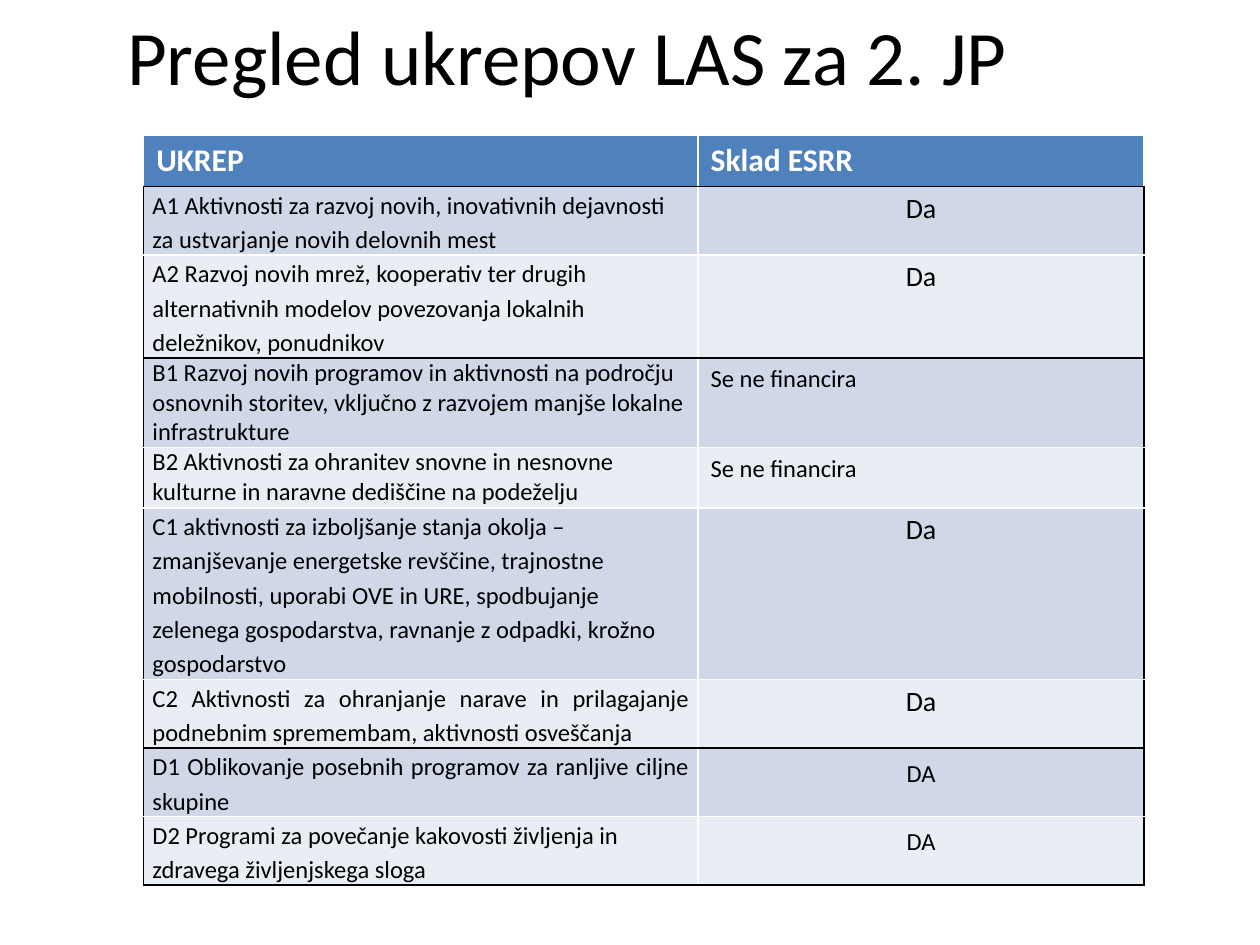
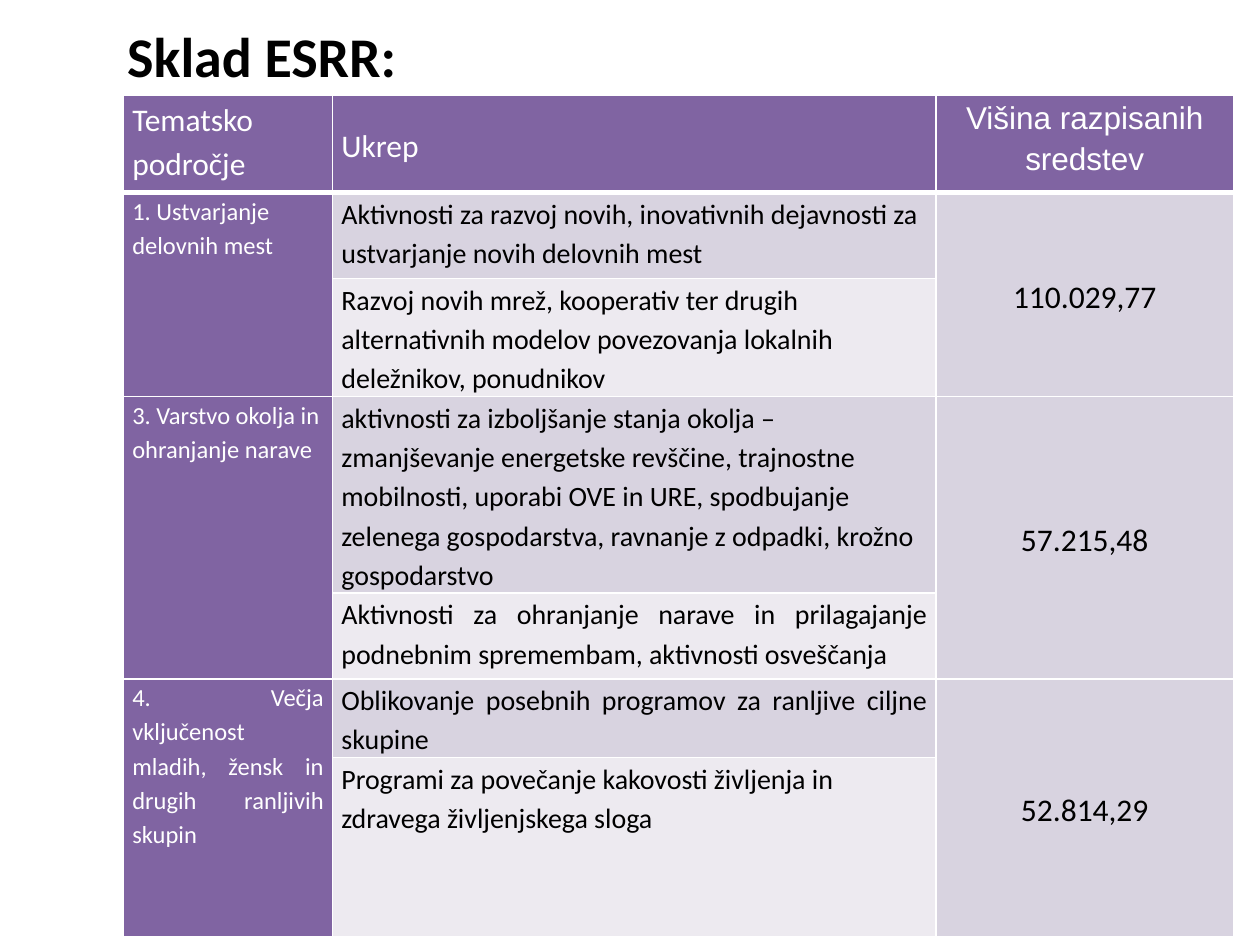
from lxml import etree
from pptx import Presentation
from pptx.dml.color import RGBColor
from pptx.enum.text import MSO_ANCHOR, MSO_AUTO_SIZE, PP_ALIGN
from pptx.oxml.ns import qn
from pptx.util import Inches, Pt

LEFT, MID, JUST = PP_ALIGN.LEFT, PP_ALIGN.CENTER, PP_ALIGN.JUSTIFY
TOP, CENTRE = MSO_ANCHOR.TOP, MSO_ANCHOR.MIDDLE
HEX = {"black": "000000", "white": "FFFFFF",
       "blue": "4F81BD", "sky": "D0D8E8", "mist": "E9EDF4",
       "plum": "8064A2", "lilac": "D8D3E0", "pale": "EDEAF0"}
LOOSE = 1.15


def write(frame, text, size=14, color="black", bold=False, font="Calibri",
          align=LEFT, space=LOOSE):
    para = frame.paragraphs[0]
    para.text = text
    para.alignment = align
    para.line_spacing = space
    face = para.runs[0].font
    face.name, face.size, face.bold = font, Pt(size), bold
    face.color.rgb = RGBColor.from_string(HEX[color])


# Each cell: text, fill, inset, anchor, text format
wide = (0.1, 0.05)
snug = (0.07, 0)
roomy = (0.08, 0)

# Overview of measures
head = dict(size=18, color="white", bold=True, space=1)
yes = ("Da", roomy, dict(size=16, align=MID))
no = ("Se ne financira", wide, dict(space=1))
also = ("DA", wide, dict(align=MID))
plain, tight, even = {}, dict(space=1), dict(align=JUST)
steps = [
    ("A1 Aktivnosti za razvoj novih, inovativnih dejavnosti za ustvarjanje novih delovnih mest", plain, yes),
    ("A2 Razvoj novih mrež, kooperativ ter drugih alternativnih modelov povezovanja lokalnih "
     "deležnikov, ponudnikov", plain, yes),
    ("B1 Razvoj novih programov in aktivnosti na področju osnovnih storitev, vključno z razvojem "
     "manjše lokalne infrastrukture", tight, no),
    ("B2 Aktivnosti za ohranitev snovne in nesnovne kulturne in naravne dediščine na podeželju", tight, no),
    ("C1 aktivnosti za izboljšanje stanja okolja –zmanjševanje energetske revščine, trajnostne "
     "mobilnosti, uporabi OVE in URE, spodbujanje zelenega gospodarstva, ravnanje z odpadki, "
     "krožno gospodarstvo", plain, yes),
    ("C2 Aktivnosti za ohranjanje narave in prilagajanje podnebnim spremembam, aktivnosti osveščanja", even, yes),
    ("D1 Oblikovanje posebnih programov za ranljive ciljne skupine", even, also),
    ("D2 Programi za povečanje kakovosti življenja in zdravega življenjskega sloga", plain, also),
]
survey = [[(text, "blue", wide, TOP, head) for text in ("UKREP", "Sklad ESRR")]]
for num, (text, style, (mark, inset, look)) in enumerate(steps):
    tint = ("sky", "mist")[num % 2]
    survey.append([(text, tint, snug, TOP, style), (mark, tint, inset, TOP, look)])

# Funds by theme: theme, its align, sum, two measures with their align
themes = [
    ("1. Ustvarjanje delovnih mest", LEFT, "110.029,77",
     [("Aktivnosti za razvoj novih, inovativnih dejavnosti za ustvarjanje novih delovnih mest", LEFT),
      ("Razvoj novih mrež, kooperativ ter drugih alternativnih modelov povezovanja lokalnih "
       "deležnikov, ponudnikov", LEFT)]),
    ("3. Varstvo okolja in ohranjanje narave", LEFT, "57.215,48",
     [("aktivnosti za izboljšanje stanja okolja –zmanjševanje energetske revščine, trajnostne "
       "mobilnosti, uporabi OVE in URE, spodbujanje zelenega gospodarstva, ravnanje z odpadki, "
       "krožno gospodarstvo", LEFT),
      ("Aktivnosti za ohranjanje narave in prilagajanje podnebnim spremembam, aktivnosti osveščanja", JUST)]),
    ("4. Večja vključenost mladih, žensk in drugih ranljivih skupin", JUST, "52.814,29",
     [("Oblikovanje posebnih programov za ranljive ciljne skupine", JUST),
      ("Programi za povečanje kakovosti življenja in zdravega življenjskega sloga", LEFT)]),
]
head = dict(size=18, color="white")
funds = [[("Tematsko področje", "plum", snug, TOP, head),
          ("Ukrep", "plum", snug, CENTRE, head),
          ("Višina razpisanih sredstev", "plum", snug, TOP,
           dict(head, font="Arial", align=MID))]]
for theme, side, total, tasks in themes:
    first, last = [(text, tint, snug, TOP, dict(size=16, align=align))
                   for (text, align), tint in zip(tasks, ("lilac", "pale"))]
    funds.append([(theme, "plum", snug, TOP, dict(color="white", align=side)), first,
                  (total, "lilac", snug, CENTRE, dict(size=18, align=MID))])
    funds.append([None, last, None])

pages = [
    dict(title="Pregled ukrepov LAS za 2. JP", look=dict(size=44), at=(1.14, 1.07),
         cols=(4.4, 3.54), rows=(0.41, 0.54, 0.81, 0.71, 0.48, 1.36, 0.54, 0.54, 0.54),
         cells=survey, dark=(1, 3, 7, 9), frame="black", rule=1),
    dict(title="Sklad ESRR:", look=dict(size=32, bold=True), at=(0.98, 0.76),
         cols=(1.66, 4.79, 2.36), rows=(0.77, 0.68, 0.93, 1.56, 0.68, 0.62, 1.42),
         cells=funds, dark=(), frame="white", rule=3),
]

deck = Presentation()
deck.slide_width, deck.slide_height = Inches(10), Inches(7.5)
for page in pages:
    slide = deck.slides.add_slide(deck.slide_layouts[5])
    title = slide.shapes.title
    title.left, title.top, title.width, title.height = map(Inches, (0.91, -0.19, 8.83, 1.25))
    title.text_frame.auto_size = MSO_AUTO_SIZE.NONE
    title.text_frame.vertical_anchor = CENTRE
    write(title.text_frame, page["title"], space=1, **page["look"])

    cols, rows, dark = page["cols"], page["rows"], page["dark"]
    area = map(Inches, (*page["at"], sum(cols), sum(rows)))
    table = slide.shapes.add_table(len(rows), len(cols), *area).table
    for col, width in zip(table.columns, cols):
        col.width = Inches(width)
    for row, height in zip(table.rows, rows):
        row.height = Inches(height)

    for r, line in enumerate(page["cells"]):
        for c, item in enumerate(line):
            cell = table.cell(r, c)
            if item:
                text, tint, (side, edge), anchor, look = item
                cell.margin_left = cell.margin_right = Inches(side)
                cell.margin_top = cell.margin_bottom = Inches(edge)
                cell.vertical_anchor = anchor
                write(cell.text_frame, text, **look)
            else:
                table.cell(r - 1, c).merge(cell)
                tint = page["cells"][r - 1][c][1]
            cell.fill.solid()
            cell.fill.fore_color.rgb = RGBColor.from_string(HEX[tint])

            outer = page["frame"] if r else "white"
            rules = {"lnL": (outer if c == 0 else "white", 1),
                     "lnR": (outer if c == len(cols) - 1 else "white", 1),
                     "lnT": ("black" if r in dark else "white", page["rule"] if r == 1 else 1),
                     "lnB": ("black" if r + 1 in dark else "white", page["rule"] if r == 0 else 1)}
            props = cell._tc.get_or_add_tcPr()
            for spot, (tag, (color, weight)) in enumerate(rules.items()):
                rule = etree.Element(qn("a:" + tag), w=str(Pt(weight)))
                paint = etree.SubElement(rule, qn("a:solidFill"))
                etree.SubElement(paint, qn("a:srgbClr"), val=HEX[color])
                props.insert(spot, rule)

deck.save("out.pptx")
